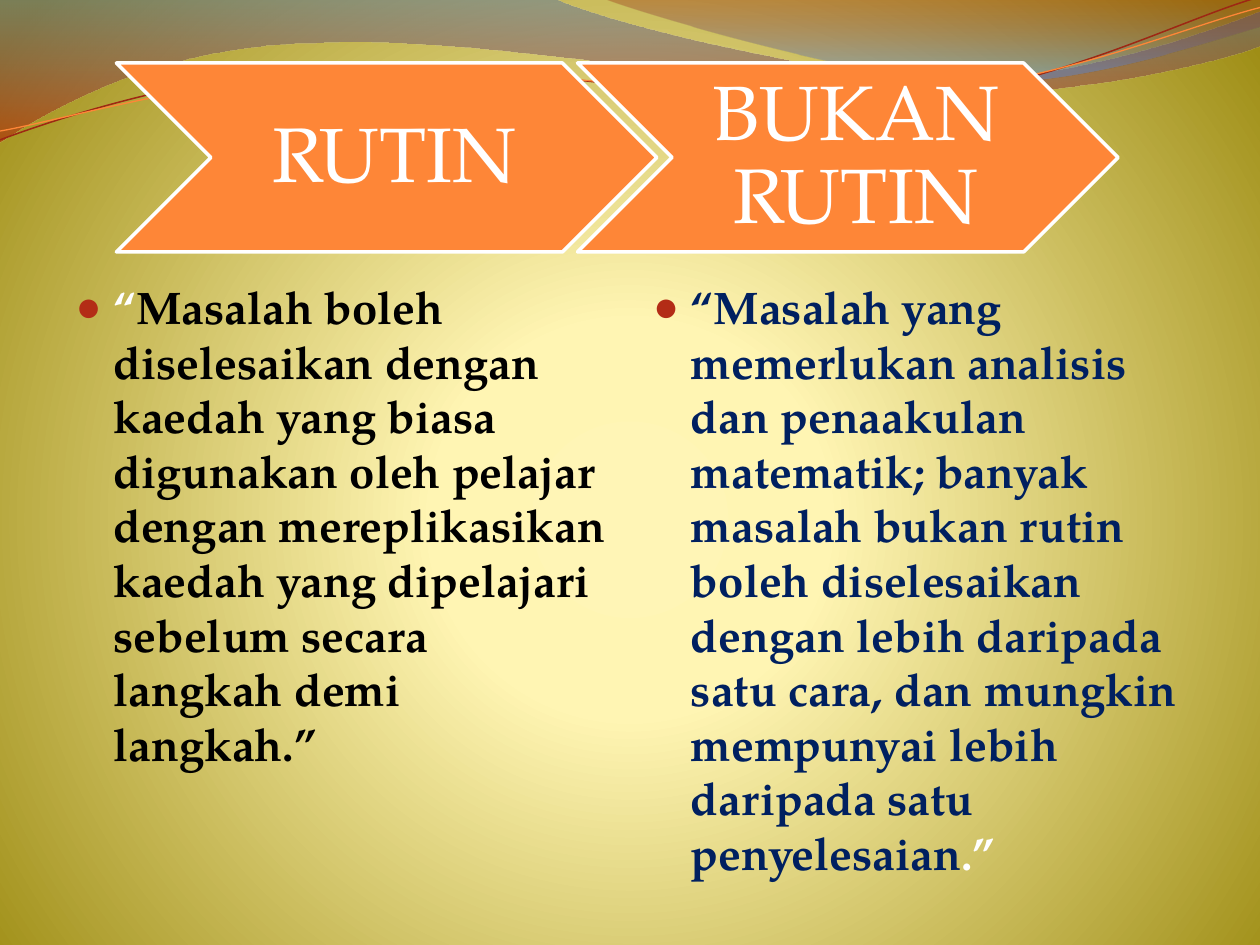
from math import cos, radians, sin

from lxml import etree
from pptx import Presentation
from pptx.dml.color import RGBColor
from pptx.enum.shapes import MSO_SHAPE
from pptx.enum.text import MSO_ANCHOR, MSO_AUTO_SIZE, PP_ALIGN
from pptx.oxml import parse_xml
from pptx.oxml.ns import nsdecls, qn
from pptx.util import Pt

CHEVRON = MSO_SHAPE.CHEVRON
MIDDLE = MSO_ANCHOR.MIDDLE
NO_AUTOFIT = MSO_AUTO_SIZE.NONE
CENTER = PP_ALIGN.CENTER

THEME = {
    "font": "TeX Gyre Pagella",
    "heading_size": 44,
    "body_size": 26,
    "white": "FFFFFF",
    "black": "000000",
    "navy": "002060",
    "orange": "FE8637",
    "rust": "9E2713",
    "bullet": "B32C16",
    "backdrop": [(0, "FFF5B6", 100), (25, "FFF5B3", 100), (100, "9F8E16", 100)],
    "wide_wave": [(0, "4F6EA8", 45), (100, "B61A00", 55)],
    "right_wave": [(0, "951500", 30), (80, "5681D1", 45)],
}
LINEAR = '<a:lin ang="5400000" scaled="0"/>'
RADIAL = '<a:path path="circle"><a:fillToRect l="10000" t="110000" r="10000" b="100000"/></a:path>'
TILT = 2.7
PIVOT_X, PIVOT_Y = 359.3, 41.6


def gradient(stops, direction):
    marks = "".join(
        f'<a:gs pos="{pos * 1000}"><a:srgbClr val="{color}"><a:alpha val="{alpha * 1000}"/></a:srgbClr></a:gs>'
        for pos, color, alpha in stops
    )
    return parse_xml(f'<a:gradFill {nsdecls("a")} rotWithShape="1"><a:gsLst>{marks}</a:gsLst>{direction}</a:gradFill>')


def add_span(para, text, size, color, bold):
    span = para.add_run()
    span.text = text
    for name, value in {"name": THEME["font"], "size": Pt(size), "bold": bold}.items():
        setattr(span.font, name, value)
    span.font.color.rgb = RGBColor.from_string(THEME[color])


deck = Presentation()
deck.slide_width, deck.slide_height = Pt(720), Pt(540)
page = deck.slides.add_slide(deck.slide_layouts[3])
title, left_body, right_body = page.placeholders
title.element.getparent().remove(title.element)

backdrop = parse_xml(f'<p:bg {nsdecls("p", "a")}><p:bgPr><a:effectLst/></p:bgPr></p:bg>')
backdrop[0].insert(0, gradient(THEME["backdrop"], RADIAL))
page.element.cSld.insert(0, backdrop)

waves = [
    {"start": (0, -0.7), "fill": "wide_wave", "steps": [
        [(316.8, -0.7)],
        [(342.7, 12.2), (478.1, 45.4), (545.8, 45.4)],
        [(614.2, 45.4), (689.8, 18.7), (720, 6.5)],
        [(720.7, 25.9)],
        [(707.8, 31.7), (626.4, 54.7), (537.1, 54)],
        [(447.8, 54), (275, 20.2), (185, 24.5)],
        [(92.9, 25.2), (33.1, 59.8), (-0.7, 81.4)],
    ]},
    {"start": (344.9, -0.7), "fill": "right_wave", "steps": [
        [(366.5, 7.9), (491, 44.6), (553.7, 46.8)],
        [(616.3, 49.7), (691.9, 23), (720, 15.1)],
        [(720, 0)],
    ]},
    {"start": (0, 79.9), "line": "rust", "width": 0.85, "steps": [
        [(34.6, 67), (113.8, 41), (199.4, 37.4)],
        [(284.4, 33.8), (427, 64.1), (513.4, 57.6)],
        [(599.8, 51.1), (675.4, 10.8), (718.6, -1.4)],
    ]},
    {"start": (0, 74.9), "line": "orange", "width": 0.75, "steps": [
        [(33.8, 69.1), (118.1, 43.9), (203.8, 40.3)],
        [(290.2, 36.7), (429.8, 59.8), (516.2, 54)],
        [(601.9, 48.2), (677.5, 15.1), (720, 4.3)],
    ]},
]
for wave in waves:
    turn = radians(TILT if "line" in wave else 0)
    points = [
        (Pt(PIVOT_X + (x - PIVOT_X) * cos(turn) - (y - PIVOT_Y) * sin(turn)),
         Pt(PIVOT_Y + (x - PIVOT_X) * sin(turn) + (y - PIVOT_Y) * cos(turn)))
        for x, y in [wave["start"], *(point for step in wave["steps"] for point in step)]
    ]
    builder = page.shapes.build_freeform(*points[0])
    builder.add_line_segments(points[1:], close="fill" in wave)
    ribbon = builder.convert_to_shape()
    segments = iter(list(ribbon.element.iter(qn("a:lnTo"))))
    for step in wave["steps"]:
        corners = [next(segments) for point in step]
        if len(corners) == 3:
            curve = etree.Element(qn("a:cubicBezTo"))
            corners[0].addprevious(curve)
            for corner in corners:
                curve.append(corner[0])
                corner.getparent().remove(corner)
    ribbon.shadow.inherit = False
    ribbon.fill.background()
    if "fill" in wave:
        ribbon.line.fill.background()
        empty_fill = ribbon.element.spPr.find(qn("a:noFill"))
        ribbon.element.spPr.replace(empty_fill, gradient(THEME[wave["fill"]], LINEAR))
    else:
        ribbon.rotation = -TILT
        ribbon.line.color.rgb = RGBColor.from_string(THEME[wave["line"]])
        ribbon.line.width = Pt(wave["width"])

for column, heading in enumerate(["RUTIN", "BUKAN RUTIN"]):
    arrow = page.shapes.add_shape(CHEVRON, Pt(66.5 + 263.5 * column), Pt(36), Pt(308.9), Pt(108))
    arrow.shadow.inherit = False
    arrow.fill.solid()
    arrow.fill.fore_color.rgb = RGBColor.from_string(THEME["orange"])
    arrow.line.color.rgb = RGBColor.from_string(THEME["white"])
    arrow.line.width = Pt(2)
    frame_format = {"margin_left": Pt(13.7), "margin_top": Pt(4.3), "margin_right": Pt(4.3),
                    "margin_bottom": Pt(4.3), "vertical_anchor": MIDDLE, "word_wrap": True}
    for name, value in frame_format.items():
        setattr(arrow.text_frame, name, value)
    para = arrow.text_frame.paragraphs[0]
    para.alignment, para.line_spacing = CENTER, 0.9
    add_span(para, heading, THEME["heading_size"], "white", False)

definitions = [
    (left_body, [
        ("“", "white"),
        ("Masalah boleh diselesaikan dengan kaedah yang biasa digunakan oleh pelajar dengan "
         "mereplikasikan kaedah yang dipelajari sebelum secara langkah demi langkah.”", "black"),
    ]),
    (right_body, [
        ("“Masalah yang memerlukan analisis dan penaakulan matematik; banyak masalah bukan rutin "
         "boleh diselesaikan dengan lebih daripada satu cara, dan mungkin mempunyai lebih "
         "daripada satu penyelesaian", "navy"),
        (".”", "white"),
    ]),
]
for column, (box, spans) in enumerate(definitions):
    place = {"left": 36 + 330 * column, "top": 155.9, "width": 318, "height": 326.2}
    for name, value in place.items():
        setattr(box, name, Pt(value))
    box.text_frame.auto_size = NO_AUTOFIT
    para = box.text_frame.paragraphs[0]
    for text, color in spans:
        add_span(para, text, THEME["body_size"], color, True)
    bullet = para._p.get_or_add_pPr()
    bullet.set("marL", str(Pt(21.6)))
    bullet.set("indent", str(-Pt(21.6)))
    for part in (f'buClr {nsdecls("a")}><a:srgbClr val="{THEME["bullet"]}"/></a:buClr',
                 f'buSzPct {nsdecls("a")} val="95000"/',
                 f'buChar {nsdecls("a")} char="●"/'):
        bullet.append(parse_xml(f"<a:{part}>"))

deck.save("out.pptx")
